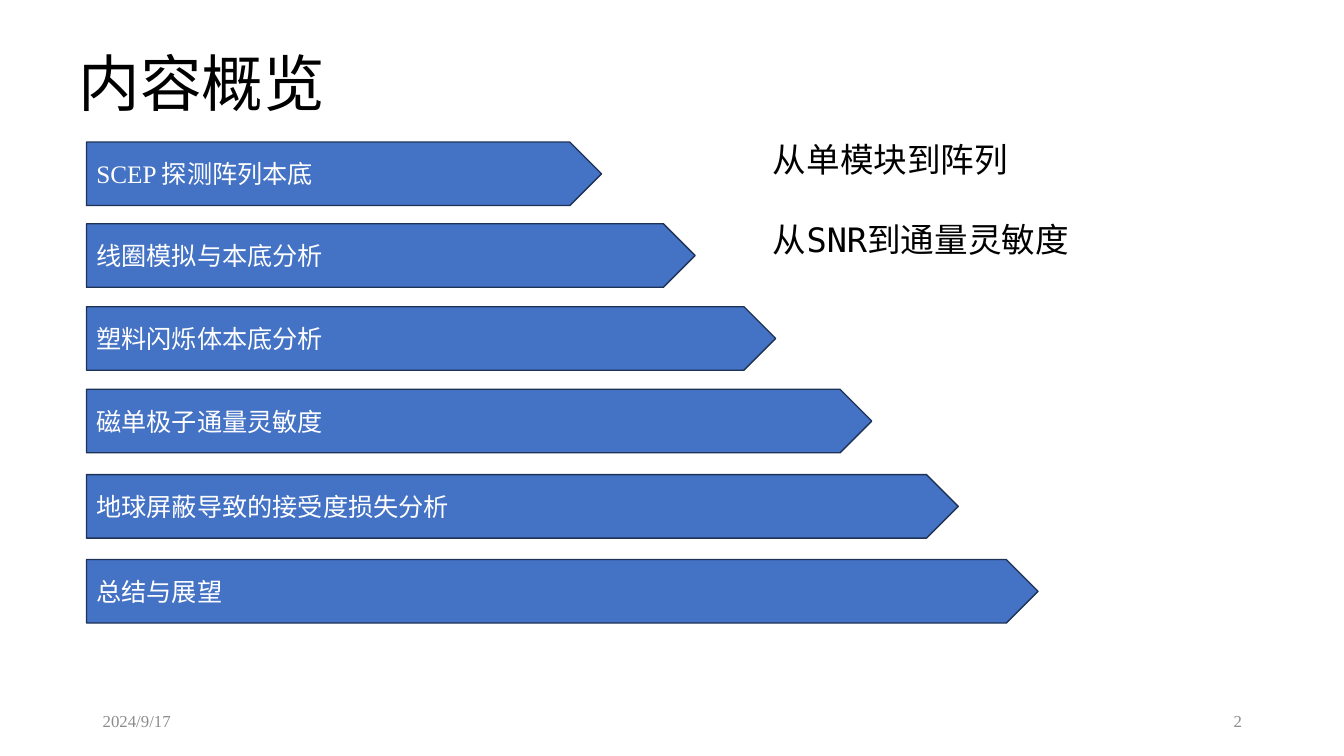
from dataclasses import dataclass

from pptx import Presentation
from pptx.dml.color import RGBColor
from pptx.enum.shapes import MSO_SHAPE
from pptx.enum.text import MSO_ANCHOR, PP_ALIGN
from pptx.util import Cm, Pt


@dataclass(frozen=True)
class Theme:
    bar: RGBColor = RGBColor.from_string("4472C4")
    outline: RGBColor = RGBColor.from_string("1E3256")
    ink: RGBColor = RGBColor.from_string("000000")
    paper: RGBColor = RGBColor.from_string("FFFFFF")
    muted: RGBColor = RGBColor.from_string("8C8C8C")
    title_size: int = 44
    remark_size: int = 24
    bar_size: int = 18
    footer_size: int = 12
    heading_font: str = "Arial"
    body_font: str = "Times New Roman"
    remark_font: str = "DejaVu Sans Mono"


theme = Theme()


def write(holder, text, *, size, color, font=theme.body_font, align=PP_ALIGN.LEFT,
          anchor=MSO_ANCHOR.MIDDLE, gap=0, line_spacing=None):
    """Fill a shape with text, one paragraph per line; gap separates paragraphs."""
    frame = holder.text_frame
    frame.word_wrap = True
    frame.vertical_anchor = anchor
    frame.text = text
    for index, paragraph in enumerate(frame.paragraphs):
        paragraph.alignment = align
        paragraph.line_spacing = line_spacing
        paragraph.space_before = Pt(gap if index else 0)
        for run in paragraph.runs:
            run.font.name = font
            run.font.size = Pt(size)
            run.font.color.rgb = color


deck = Presentation()
deck.slide_width, deck.slide_height = Cm(33.87), Cm(19.05)
slide = deck.slides.add_slide(deck.slide_layouts[5])
shapes = slide.shapes

# Title
heading = shapes.title
heading.left, heading.top, heading.width, heading.height = Cm(1.73), Cm(0.33), Cm(29.21), Cm(3.68)
write(heading, "内容概览", size=theme.title_size, color=theme.ink,
      font=theme.heading_font, line_spacing=0.9)

# Agenda bars, growing towards the conclusion: text, top, width
agenda = [
    ("SCEP 探测阵列本底", 3.58, 12.98),
    ("线圈模拟与本底分析", 5.64, 15.34),
    ("塑料闪烁体本底分析", 7.73, 17.37),
    ("磁单极子通量灵敏度", 9.81, 19.79),
    ("地球屏蔽导致的接受度损失分析", 11.96, 21.97),
    ("总结与展望", 14.1, 23.98),
]
for topic, top, width in agenda:
    bar = shapes.add_shape(MSO_SHAPE.PENTAGON, Cm(2.18), Cm(top), Cm(width), Cm(1.6))
    bar.shadow.inherit = False
    bar.fill.solid()
    bar.fill.fore_color.rgb = theme.bar
    bar.line.color.rgb = theme.outline
    bar.line.width = Pt(1)
    write(bar, topic, size=theme.bar_size, color=theme.paper)

# Remarks beside the first two bars
remarks = shapes.add_textbox(Cm(19.23), Cm(3.38), Cm(11.96), Cm(3.33))
write(remarks, "从单模块到阵列\n从SNR到通量灵敏度", size=theme.remark_size, color=theme.ink,
      font=theme.remark_font, anchor=MSO_ANCHOR.TOP, gap=28)

# Footer: date and page number
for entry, left, align in [("2024/9/17", 2.34, PP_ALIGN.LEFT), ("2", 23.93, PP_ALIGN.RIGHT)]:
    footer = shapes.add_textbox(Cm(left), Cm(17.65), Cm(7.62), Cm(1.02))
    write(footer, entry, size=theme.footer_size, color=theme.muted, align=align)

deck.save("out.pptx")
